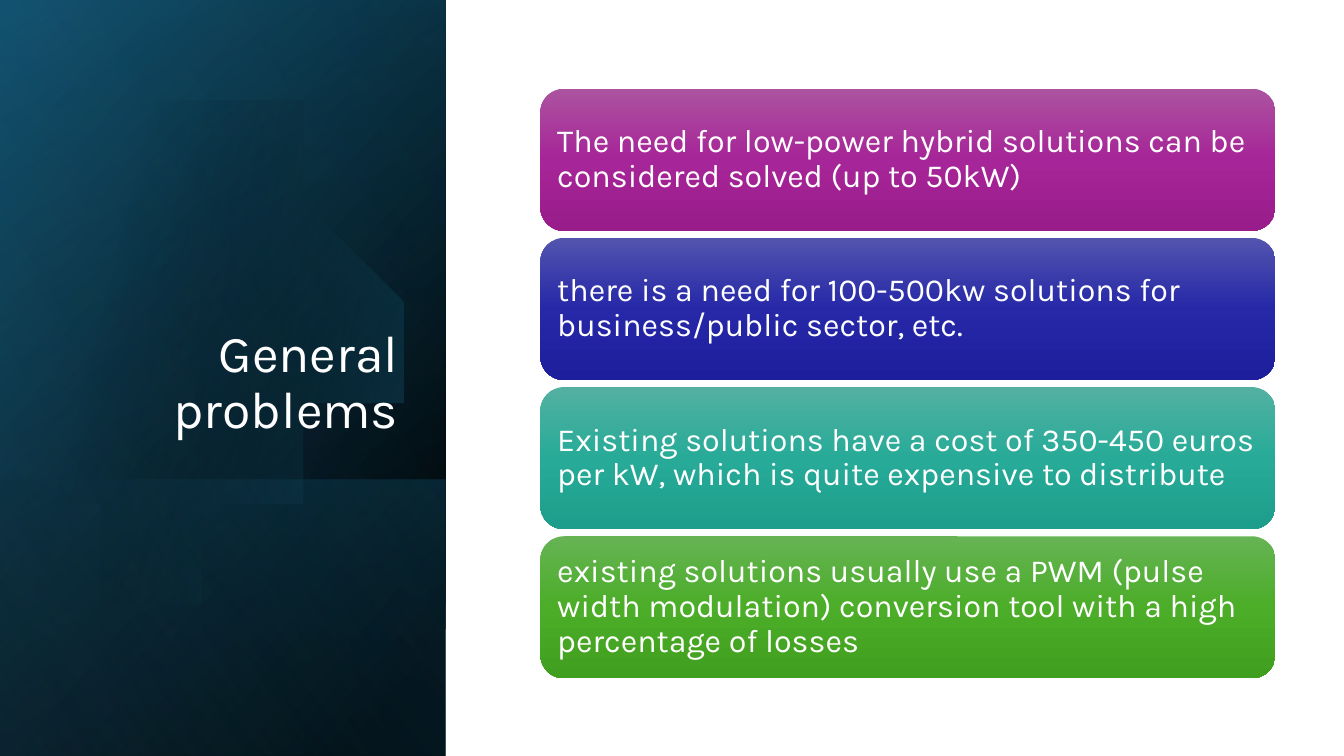
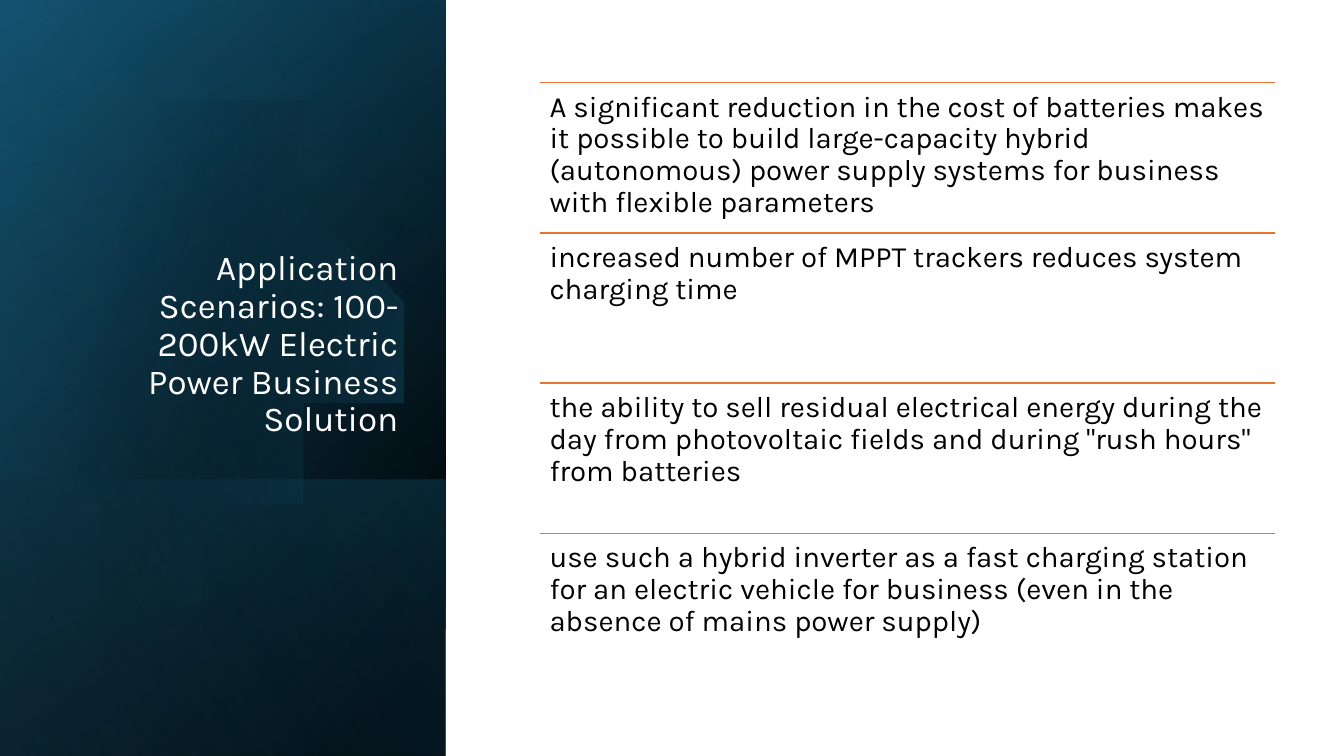
from lxml import etree
from pptx import Presentation
from pptx.dml.color import RGBColor
from pptx.enum.shapes import MSO_CONNECTOR, MSO_SHAPE
from pptx.enum.text import MSO_ANCHOR, MSO_AUTO_SIZE, PP_ALIGN
from pptx.oxml.ns import qn
from pptx.util import Inches, Pt

RECTANGLE, ROUNDED = MSO_SHAPE.RECTANGLE, MSO_SHAPE.ROUNDED_RECTANGLE
STRAIGHT = MSO_CONNECTOR.STRAIGHT
TOP, MIDDLE, BOTTOM = MSO_ANCHOR.TOP, MSO_ANCHOR.MIDDLE, MSO_ANCHOR.BOTTOM
LEFT, RIGHT = PP_ALIGN.LEFT, PP_ALIGN.RIGHT
NO_AUTOFIT = MSO_AUTO_SIZE.NONE

WIDTH, HEIGHT = 13.33, 7.5
PANEL_WIDTH = 4.42
BAND_TOP = 4.76
CONTENT_LEFT, CONTENT_WIDTH = 5.36, 7.29
CARD_TOP, CARD_HEIGHT, CARD_PITCH = 0.88, 1.41, 1.48
ROW_TOP, ROW_HEIGHT = 0.82, 1.49
CURVE_STEPS = 24

PANEL_LAYERS = [
    (0, 220, [(8, "000000", 100), (100, "104862", 100)]),
    (0, 240, [(0, "000000", 0), (99, "156082", 46)]),
    (BAND_TOP, 140, [(2, "156082", 29), (100, "000000", 30)]),
    ("disc", 14, [(29, "000000", 0), (100, "156082", 43)]),
    (0, 150, [(0, "000000", 0), (99, "46B1E1", 11)]),
]
DISC_START = (1.49, 1.1)
DISC_CURVES = [
    ((2.46, 1.12), (3.35, 1.77), (3.63, 2.75)),
    ((3.98, 3.97), (3.28, 5.23), (2.07, 5.58)),
    ((1.31, 5.8), (0.53, 5.61), (-0.03, 5.14)),
    ((-0.15, 5.03),),
    ((-0.15, 1.75),),
    ((0, 1.61),),
    ((0.23, 1.42), (0.5, 1.28), (0.8, 1.19)),
    ((1.03, 1.13), (1.26, 1.1), (1.49, 1.1)),
]
PROBLEMS = [
    ("The need for low-power hybrid solutions can be considered solved (up to 50kW)",
     ("AC53A0", "A62598", "991C8B")),
    ("there is a need for 100-500kw solutions for business/public sector, etc.",
     ("5354AE", "2628A8", "1D1E9B")),
    ("Existing solutions have a cost of 350-450 euros per kW, "
     "which is quite expensive to distribute",
     ("53B0A1", "27AB98", "1D9D8B")),
    ("existing solutions usually use a PWM (pulse width modulation) "
     "conversion tool with a high percentage of losses",
     ("66B354", "4BAD28", "409F1E")),
]
SCENARIOS = [
    "A significant reduction in the cost of batteries makes it possible to build "
    "large-capacity hybrid (autonomous) power supply systems for business "
    "with flexible parameters",
    "increased number of MPPT trackers reduces system charging time",
    "the ability to sell residual electrical energy during the day from "
    'photovoltaic fields and during "rush hours" from batteries',
    "use such a hybrid inverter as a fast charging station for an electric vehicle "
    "for business (even in the absence of mains power supply)",
]
TITLES = [
    ("General problems", 37),
    ("Application Scenarios: 100-200kW Electric Power Business Solution", 25),
]


def paint_gradient(shape, angle, stops):
    shape.shadow.inherit = False
    shape.line.fill.background()
    gradient = etree.Element(qn("a:gradFill"), rotWithShape="1")
    stop_list = etree.SubElement(gradient, qn("a:gsLst"))
    for position, color, opacity in stops:
        stop = etree.SubElement(stop_list, qn("a:gs"), pos=str(position * 1000))
        tint = etree.SubElement(stop, qn("a:srgbClr"), val=color)
        if opacity < 100:
            etree.SubElement(tint, qn("a:alpha"), val=str(opacity * 1000))
    etree.SubElement(gradient, qn("a:lin"), ang=str(angle * 60000), scaled="0")
    shape.element.spPr.insert(2, gradient)


def write_text(shape, text, size, color, anchor, margin, alignment=LEFT):
    frame = shape.text_frame
    frame.word_wrap = True
    frame.auto_size = NO_AUTOFIT
    frame.vertical_anchor = anchor
    frame.margin_left = frame.margin_right = Inches(margin)
    frame.margin_top = frame.margin_bottom = Inches(margin)
    paragraph = frame.paragraphs[0]
    paragraph.text = text
    paragraph.alignment = alignment
    paragraph.line_spacing = 0.9
    paragraph.font.name = "Karla"
    paragraph.font.size = Pt(size)
    paragraph.font.color.rgb = RGBColor.from_string(color)


disc_points = [DISC_START]
for curve in DISC_CURVES:
    if len(curve) == 1:
        disc_points.append(curve[0])
        continue
    corners = (disc_points[-1], *curve)
    for step in range(1, CURVE_STEPS + 1):
        t = step / CURVE_STEPS
        weights = ((1 - t) ** 3, 3 * t * (1 - t) ** 2, 3 * t * t * (1 - t), t ** 3)
        disc_points.append(tuple(
            sum(weight * corner[axis] for weight, corner in zip(weights, corners))
            for axis in (0, 1)))

presentation = Presentation()
presentation.slide_width = Inches(WIDTH)
presentation.slide_height = Inches(HEIGHT)
title_only = presentation.slide_layouts[5]

slides = []
for title_text, title_size in TITLES:
    slide = presentation.slides.add_slide(title_only)
    slides.append(slide)
    for top, angle, stops in PANEL_LAYERS:
        if top == "disc":
            builder = slide.shapes.build_freeform(*disc_points[0], scale=Inches(1))
            builder.add_line_segments(disc_points[1:], close=True)
            layer = builder.convert_to_shape()
        else:
            layer = slide.shapes.add_shape(
                RECTANGLE, 0, Inches(top), Inches(PANEL_WIDTH), Inches(HEIGHT - top))
        paint_gradient(layer, angle, stops)

    title = slide.shapes.title
    title.left, title.top = Inches(0.64), Inches(1.84)
    title.width, title.height = Inches(3.41), Inches(2.62)
    write_text(title, title_text, title_size, "FFFFFF", BOTTOM, 0.1, RIGHT)
    slide.shapes.element.append(title.element)

problems_slide, scenarios_slide = slides

for row, (text, colors) in enumerate(PROBLEMS):
    card = problems_slide.shapes.add_shape(
        ROUNDED, Inches(CONTENT_LEFT), Inches(CARD_TOP + row * CARD_PITCH),
        Inches(CONTENT_WIDTH), Inches(CARD_HEIGHT))
    paint_gradient(card, 90, [(50 * i, color, 100) for i, color in enumerate(colors)])
    write_text(card, text, 23, "FFFFFF", MIDDLE, 0.1)

for row, text in enumerate(SCENARIOS):
    top = Inches(ROW_TOP + row * ROW_HEIGHT)
    rule = scenarios_slide.shapes.add_connector(
        STRAIGHT, Inches(CONTENT_LEFT), top, Inches(CONTENT_LEFT + CONTENT_WIDTH), top)
    rule.line.color.rgb = RGBColor.from_string("E97132")
    rule.line.width = Pt(1)
    etree.SubElement(rule.element.spPr, qn("a:effectLst"))
    scenario = scenarios_slide.shapes.add_textbox(
        Inches(CONTENT_LEFT), top, Inches(CONTENT_WIDTH), Inches(ROW_HEIGHT))
    write_text(scenario, text, 21, "000000", TOP, 0.09)

presentation.save("out.pptx")
